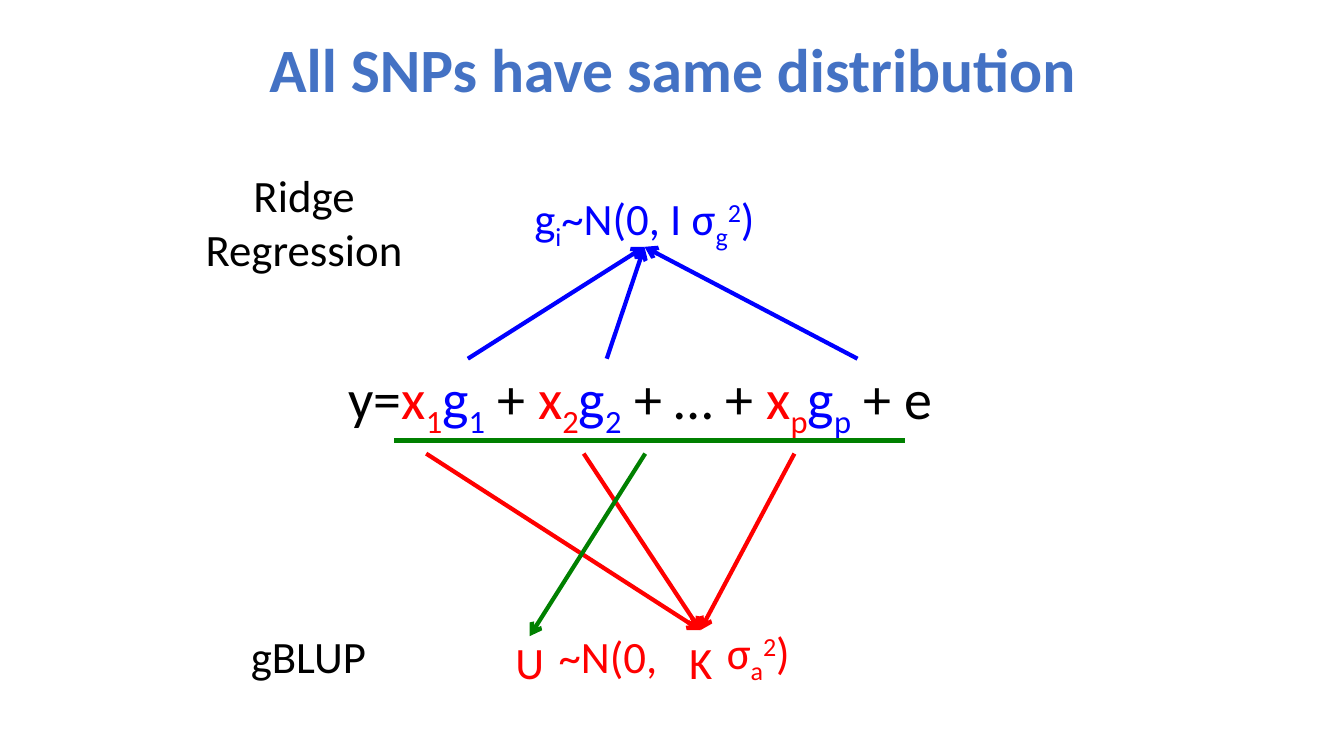
from lxml.etree import SubElement
from pptx import Presentation
from pptx.dml.color import RGBColor as RGB
from pptx.enum.shapes import MSO_CONNECTOR as CONN
from pptx.enum.text import MSO_ANCHOR as ANCHOR, MSO_AUTO_SIZE as AUTOSIZE, PP_ALIGN as ALIGN
from pptx.oxml.ns import qn
from pptx.util import Cm, Pt

COLORS = {
    "title": "4472C4",
    "text": "000000",
    "marker": "FF0000",
    "effect": "0000FF",
    "sum": "008000",
}
SUB, SUPER = -25, 30
LABEL_H = 1.27


def add_text(slide, box, runs, size=32, bold=False, frame=None, para=None):
    s = slide.shapes.add_textbox(*map(Cm, box))
    tf = s.text_frame
    frame_format = {"word_wrap": True, "vertical_anchor": ANCHOR.MIDDLE, **(frame or {})}
    for name, value in frame_format.items():
        setattr(tf, name, value)
    p = tf.paragraphs[0]
    for name, value in {"alignment": ALIGN.CENTER, **(para or {})}.items():
        setattr(p, name, value)
    for text, color, baseline in runs:
        r = p.add_run()
        r.text = text
        for name, value in {"name": "Calibri", "size": Pt(size), "bold": bold}.items():
            setattr(r.font, name, value)
        r.font.color.rgb = RGB.from_string(COLORS[color])
        if baseline:
            r._r.get_or_add_rPr().set("baseline", str(baseline * 1000))
    return s


def add_line(slide, start, end, color, arrow=True, target=None, site=0):
    c = slide.shapes.add_connector(CONN.STRAIGHT, *map(Cm, (*start, *end)))
    c.line.width = Pt(3)
    c.line.color.rgb = RGB.from_string(COLORS[color])
    if arrow:
        SubElement(c.line._get_or_add_ln(), qn("a:tailEnd"), type="arrow")
    SubElement(c._element.spPr, qn("a:effectLst"))
    if target is not None:
        c.end_connect(target, site)
    return c


def add_title(slide, box):
    runs = [("All SNPs have same distribution", "title", 0)]
    add_text(slide, box, runs, size=44, bold=True, para={"line_spacing": 0.9})


def add_equation(slide, box):
    x, y, w, h = box
    runs = [("y=", "text", 0)]
    for index, joint in (("1", " + "), ("2", " + … + "), ("p", " + e")):
        for letter, color in (("x", "marker"), ("g", "effect")):
            runs += [(letter, color, 0), (index, color, SUB)]
        runs.append((joint, "text", 0))
    add_text(
        slide, box, runs, size=40,
        frame={"vertical_anchor": ANCHOR.TOP, "auto_size": AUTOSIZE.SHAPE_TO_FIT_TEXT},
        para={"alignment": ALIGN.LEFT},
    )
    add_line(slide, (x + 1.4, y + 2.06), (x + 14.28, y + 2.06), "sum", arrow=False)


def add_ridge_regression(slide, box):
    x, y, w, h = box
    add_text(slide, (x, y, 7.11, LABEL_H), [("Ridge Regression", "text", 0)])
    prior_runs = [
        ("g", "effect", 0), ("i", "effect", SUB), ("~N(0, I σ", "effect", 0),
        ("g", "effect", SUB), ("2", "effect", SUPER), (")", "effect", 0),
    ]
    prior = add_text(slide, (x + 8.13, y, 8, LABEL_H), prior_runs)
    for dx in (7.68, 11.18, 17.5):
        add_line(slide, (x + dx, y + h), (x + 12.13, y + LABEL_H), "effect",
                 target=prior, site=2)


def add_gblup(slide, box):
    x, y, w, h = box
    row = y + h - LABEL_H
    add_text(slide, (x, row, 4.47, LABEL_H), [("gBLUP", "text", 0)])
    add_text(
        slide, (x + 7.19, row, 4.27, LABEL_H), [("~N(0,", "marker", 0)],
        frame={"margin_left": Cm(1.35)}, para={"alignment": ALIGN.LEFT},
    )
    for dx in (14.48, 9.17, 5.2):
        add_line(slide, (x + dx, y), (x + 12.11, row), "marker")
    u = add_text(slide, (x + 6.83, row + 0.15, 1.96, LABEL_H), [("U", "marker", 0)])
    add_line(slide, (x + 10.72, y), (x + 7.81, row + 0.15), "sum", target=u)
    add_text(slide, (x + 11.22, row + 0.15, 1.8, LABEL_H), [("K", "marker", 0)])
    variance = [("σ", "marker", 0), ("a", "marker", SUB),
                ("2", "marker", SUPER), (")", "marker", 0)]
    add_text(slide, (x + 12.11, row, 2.92, LABEL_H), variance)


def main():
    prs = Presentation()
    prs.slide_width, prs.slide_height = Cm(33.87), Cm(19.05)
    slide = prs.slides.add_slide(prs.slide_layouts[6])
    add_title(slide, (2.36, 0, 29.21, 3.68))
    add_equation(slide, (8.53, 9.04, 18.8, 1.96))
    add_ridge_regression(slide, (4.11, 4.95, 17.5, 4.09))
    add_gblup(slide, (5.54, 11.43, 15.03, 5.72))
    prs.save("out.pptx")


if __name__ == "__main__":
    main()
